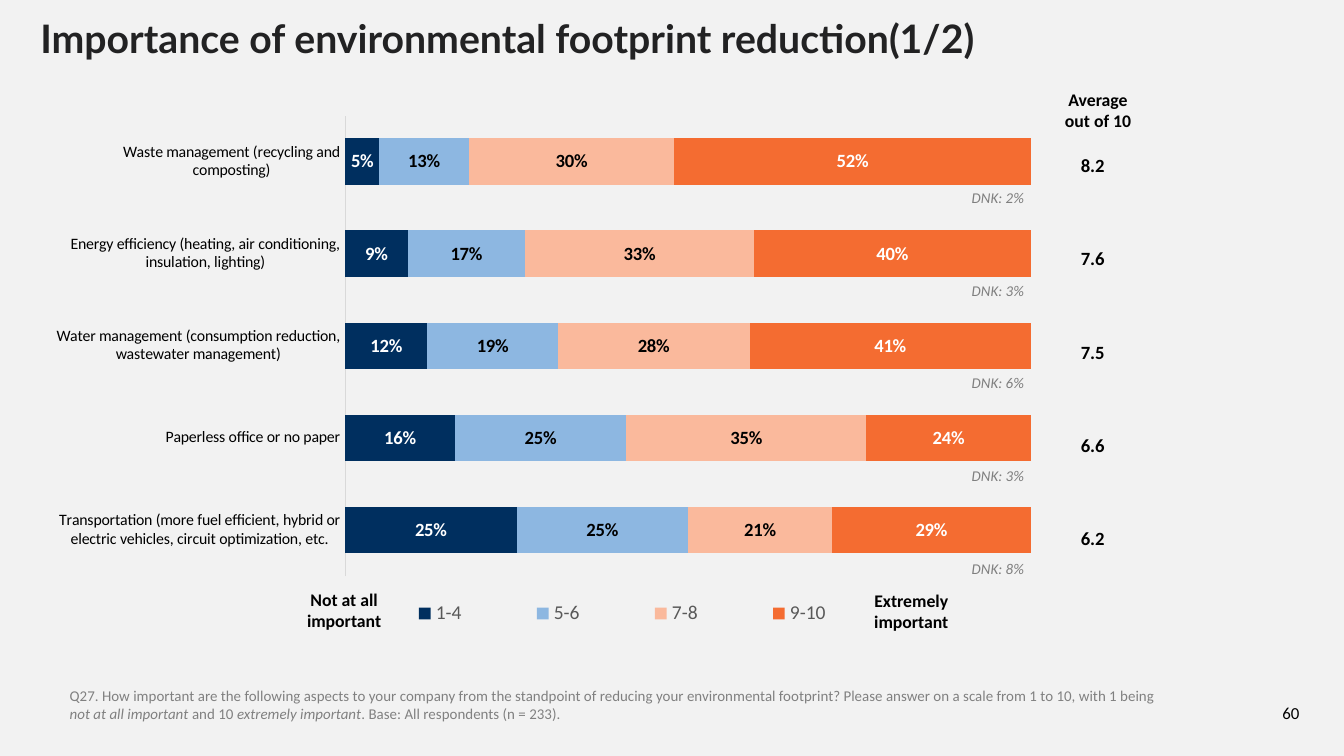
from pptx import Presentation
from pptx.chart.data import CategoryChartData
from pptx.dml.color import RGBColor
from pptx.enum.chart import XL_CHART_TYPE as ChartType, XL_LABEL_POSITION as LabelPosition
from pptx.enum.chart import XL_LEGEND_POSITION as LegendPosition, XL_TICK_MARK as TickMark
from pptx.enum.text import MSO_ANCHOR as Anchor, PP_ALIGN as Align
from pptx.oxml import parse_xml
from pptx.oxml.ns import nsdecls
from pptx.util import Inches, Pt

COLORS = {
    "background": "F2F2F2", "title": "222223", "black": "000000", "white": "FFFFFF",
    "dnk": "7F7F7F", "note": "808080", "legend": "595959", "axis": "D9D9D9",
    "navy": "002F5F", "blue": "8DB7E1", "peach": "FAB99C", "orange": "F46C31",
}


def style(font, size, color, bold=None, italic=None, name="Calibri"):
    font.name, font.size, font.bold, font.italic = name, Pt(size), bold, italic
    font.color.rgb = RGBColor.from_string(COLORS[color])


def add_text(position, lines, size, color, align=Align.CENTER, spacing=None,
             after=None, bold=None, italic=None):
    frame = page.shapes.add_textbox(*map(Inches, position)).text_frame
    frame.word_wrap = True
    for index, line in enumerate(lines):
        para = frame.add_paragraph() if index else frame.paragraphs[0]
        para.text, para.alignment = line, align
        para.line_spacing = Pt(spacing) if spacing else None
        para.space_after = Pt(after) if after else None
        style(para.font, size, color, bold, italic)
    return frame


# Widescreen page, 16 to 9
deck = Presentation()
deck.slide_width, deck.slide_height = Inches(10), Inches(10 * 9 / 16)
page = deck.slides.add_slide(deck.slide_layouts[5])
page.background.fill.solid()
page.background.fill.fore_color.rgb = RGBColor.from_string(COLORS["background"])

# Title
title = page.shapes.title
title.left, title.top, title.width, title.height = map(Inches, (0.23, 0.12, 9.63, 0.36))
frame = title.text_frame
frame.text = "Importance of environmental footprint reduction(1/2)"
frame.vertical_anchor = Anchor.MIDDLE
frame.margin_left = frame.margin_right = Inches(0.07)
frame.margin_top = frame.margin_bottom = Inches(0.04)
para = frame.paragraphs[0]
para.alignment, para.line_spacing = Align.LEFT, 0.9
style(para.font, 21, "title", bold=True, name="Lato")

# Chart data: name, fill, label colour, values
series_rows = [
    ("1-4", "navy", "white", (0.05, 0.09, 0.12, 0.16, 0.25)),
    ("5-6", "blue", "black", (0.13, 0.17, 0.19, 0.25, 0.25)),
    ("7-8", "peach", "black", (0.30, 0.33, 0.28, 0.35, 0.21)),
    ("9-10", "orange", "white", (0.52, 0.40, 0.41, 0.24, 0.29)),
]
data = CategoryChartData(number_format="0%")
data.categories = [
    "Waste management (recycling and composting)",
    "Energy efficiency (heating, air conditioning, insulation, lighting)",
    "Water management (consumption reduction, wastewater management)",
    "Paperless office or no paper",
    "Transportation (more fuel efficient, hybrid or electric vehicles, circuit optimization, etc.",
]
for name, fill, label_color, values in series_rows:
    data.add_series(name, values)

# Stacked bars
chart = page.shapes.add_chart(
    ChartType.BAR_STACKED_100, *map(Inches, (0.42, 0.71, 7.25, 4.08)), data).chart
chart.has_title = False
style(chart.font, 10, "black")
plot = chart.plots[0]
plot.gap_width, plot.overlap, plot.vary_by_categories = 98, 100, False
for series, (name, fill, label_color, values) in zip(plot.series, series_rows):
    series.format.fill.solid()
    series.format.fill.fore_color.rgb = RGBColor.from_string(COLORS[fill])
    labels = series.data_labels
    labels.show_value, labels.position = True, LabelPosition.CENTER
    labels.number_format, labels.number_format_is_linked = "0%", False
    style(labels.font, 10, label_color, bold=True)

# Axes
axis = chart.category_axis
axis.reverse_order = True
axis.major_tick_mark = axis.minor_tick_mark = TickMark.NONE
axis.format.line.width = Pt(0.75)
axis.format.line.color.rgb = RGBColor.from_string(COLORS["axis"])
style(axis.tick_labels.font, 8.5, "black")
value_axis = chart.value_axis
value_axis.maximum_scale = 1
value_axis.has_major_gridlines = False
value_axis.visible = False

# Legend
chart.has_legend = True
legend = chart.legend
legend.position, legend.include_in_layout = LegendPosition.BOTTOM, False
style(legend.font, 10.5, "legend")

# Fixed places for the plot area and the legend
for parent, index, target, box in [
    (plot._element.getparent(), 0, '<c:layoutTarget val="inner"/>', (0.295, 0.037, 0.705, 0.84)),
    (legend._element, 1, "", (0.3, 0.9, 0.56, 0.09)),
]:
    for old in parent.xpath("c:layout"):
        parent.remove(old)
    modes = "".join(f'<c:{side}Mode val="edge"/>' for side in "xy")
    sizes = "".join(f'<c:{side} val="{size}"/>' for side, size in zip("xywh", box))
    parent.insert(index, parse_xml(
        f'<c:layout {nsdecls("c")}><c:manualLayout>{target}{modes}{sizes}'
        "</c:manualLayout></c:layout>"))

# Scale ends and averages
add_text((1.95, 4.34, 1.22, 0.41), ["Not at all important"], 9.5, "black", spacing=11, bold=True)
add_text((6.27, 4.34, 1.02, 0.42), ["Extremely important"], 9.5, "black", bold=True)
add_text((7.75, 0.61, 0.84, 0.42), ["Average out of 10"], 9.5, "black", bold=True)
add_text((7.87, 0.9, 0.52, 3.22), ["8.2", "7.6", "7.5", "6.6", "6.2"], 10, "black",
         spacing=26, after=24, bold=True)

# Share of "do not know" under each bar
for row, share in enumerate((2, 3, 6, 3, 8)):
    add_text((7.07, 1.32 + 0.69 * row, 0.71, 0.26), [f"DNK: {share}%"], 8, "dnk",
             spacing=12, italic=True)

# Question note
note = add_text((0.42, 5.06, 8.39, 0.37), [""], 8, "note", align=Align.LEFT)
for text, italic in [
    ("Q27. How important are the following aspects to your company from the standpoint of "
     "reducing your environmental footprint? Please answer on a scale from 1 to 10, "
     "with 1 being ", False),
    ("not at all important ", True),
    ("and 10 ", False),
    ("extremely important", True),
    (". Base: All respondents (n = 233).", False),
]:
    span = note.paragraphs[0].add_run()
    span.text = text
    style(span.font, 8, "note", italic=italic)

# Page number
number = add_text((9.35, 5.13, 0.51, 0.3), ["60"], 9, "black")
number.vertical_anchor = Anchor.BOTTOM

deck.save("out.pptx")
